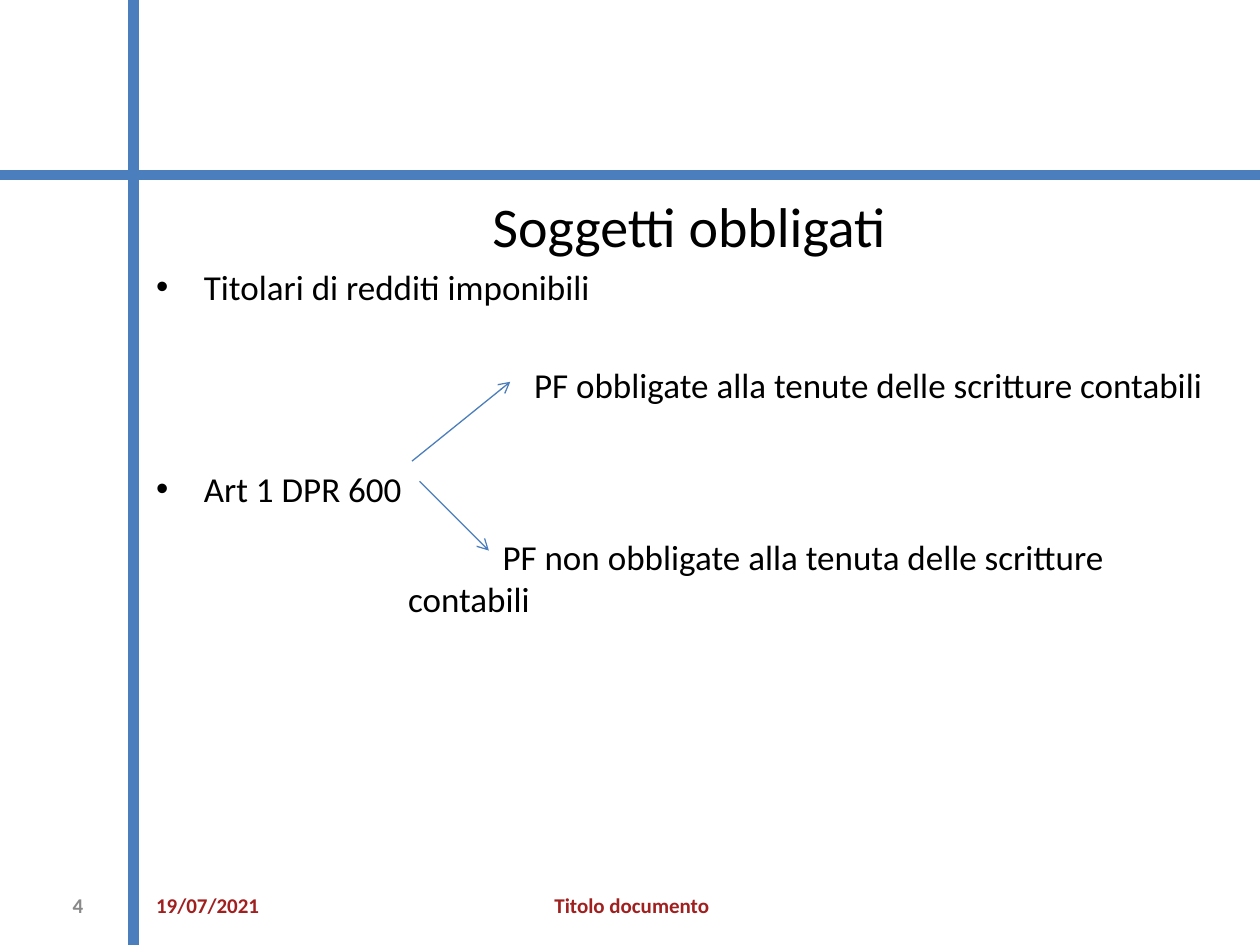
from dataclasses import dataclass

from lxml import etree
from pptx import Presentation
from pptx import util as u
from pptx.dml.color import RGBColor
from pptx.enum import shapes, text
from pptx.oxml.ns import qn

ALIGN = text.PP_ALIGN


@dataclass(frozen=True)
class Theme:
    font: str = "Calibri"
    ink: str = "000000"
    blue: str = "4B7EBC"
    red: str = "A02020"
    grey: str = "898989"
    title_size: int = 32
    body_size: int = 20
    footer_size: int = 12
    rule_width: float = 6
    arrow_width: float = 0.75


THEME = Theme()


@dataclass(frozen=True)
class Line:
    start: tuple[float, float]
    end: tuple[float, float]
    width: float
    arrow: bool = False


@dataclass(frozen=True)
class Para:
    words: str
    size: int = THEME.body_size
    color: str = THEME.ink
    bold: bool = False
    align: ALIGN = ALIGN.LEFT
    before: float = 0
    margin: float = 0
    indent: float = 0
    bullet: str = ""


@dataclass(frozen=True)
class Block:
    box: tuple[float, float, float, float]
    paras: tuple[Para, ...]
    anchor: text.MSO_ANCHOR = text.MSO_ANCHOR.TOP


def footer(left: float, width: float, words: str, color: str, align: ALIGN) -> Block:
    label = Para(words, THEME.footer_size, color, bold=True, align=align)
    return Block((left, 6.98, width, 0.4), (label,), text.MSO_ANCHOR.MIDDLE)


def item(words: str, before: float) -> Para:
    return Para(words, before=before, margin=0.38, indent=-0.38, bullet="•")


RULES = (
    Line((1.06, 0), (1.06, 7.5), THEME.rule_width),
    Line((0, 1.39), (10, 1.39), THEME.rule_width),
)
BRANCHES = (
    Line((3.27, 3.66), (4.05, 3.03), THEME.arrow_width, arrow=True),
    Line((3.33, 3.82), (3.88, 4.37), THEME.arrow_width, arrow=True),
)
BLOCKS = (
    Block((1.14, 1.47, 8.66, 3.15), (
        Para("Soggetti obbligati", THEME.title_size, align=ALIGN.CENTER),
        item("Titolari di redditi imponibili", before=4),
        Para("PF obbligate alla tenute delle scritture contabili", before=32, margin=3),
        item("Art 1 DPR 600", before=35.5),
        Para("PF non obbligate alla tenuta delle scritture contabili",
             before=14.5, margin=2, indent=0.75),
    )),
    footer(1.14, 1.34, "19/07/2021", THEME.red, ALIGN.LEFT),
    footer(3.43, 3.17, "Titolo documento", THEME.red, ALIGN.CENTER),
    footer(0.35, 0.41, "4", THEME.grey, ALIGN.RIGHT),
)


def draw_line(slide, line: Line) -> None:
    ends = [u.Inches(value) for value in line.start + line.end]
    connector = slide.shapes.add_connector(shapes.MSO_CONNECTOR.STRAIGHT, *ends)
    connector.line.color.rgb = RGBColor.from_string(THEME.blue)
    connector.line.width = u.Pt(line.width)
    if line.arrow:
        stroke = connector.line._get_or_add_ln()
        etree.SubElement(stroke, qn("a:tailEnd"), type="arrow")
    etree.SubElement(connector._element.spPr, qn("a:effectLst"))


def format_paragraph(paragraph, para: Para) -> None:
    props = paragraph._p.get_or_add_pPr()
    props.set("marL", str(u.Inches(para.margin)))
    props.set("indent", str(u.Inches(para.indent)))
    if para.bullet:
        etree.SubElement(props, qn("a:buFont"), typeface="Arial")
        etree.SubElement(props, qn("a:buChar"), char=para.bullet)
    paragraph.text = para.words
    paragraph.alignment = para.align
    if para.before:
        paragraph.space_before = u.Pt(para.before)
    for run in paragraph.runs:
        run.font.name = THEME.font
        run.font.size = u.Pt(para.size)
        run.font.bold = para.bold
        run.font.color.rgb = RGBColor.from_string(para.color)


def draw_block(slide, block: Block) -> None:
    frame = slide.shapes.add_textbox(*map(u.Inches, block.box)).text_frame
    frame.word_wrap = True
    frame.vertical_anchor = block.anchor
    for index, para in enumerate(block.paras):
        paragraph = frame.add_paragraph() if index else frame.paragraphs[0]
        format_paragraph(paragraph, para)


def main() -> None:
    deck = Presentation()
    deck.slide_width, deck.slide_height = u.Inches(10), u.Inches(7.5)
    slide = deck.slides.add_slide(deck.slide_layouts[6])
    for rule in RULES:
        draw_line(slide, rule)
    for block in BLOCKS:
        draw_block(slide, block)
    for branch in BRANCHES:
        draw_line(slide, branch)
    deck.save("out.pptx")


if __name__ == "__main__":
    main()
